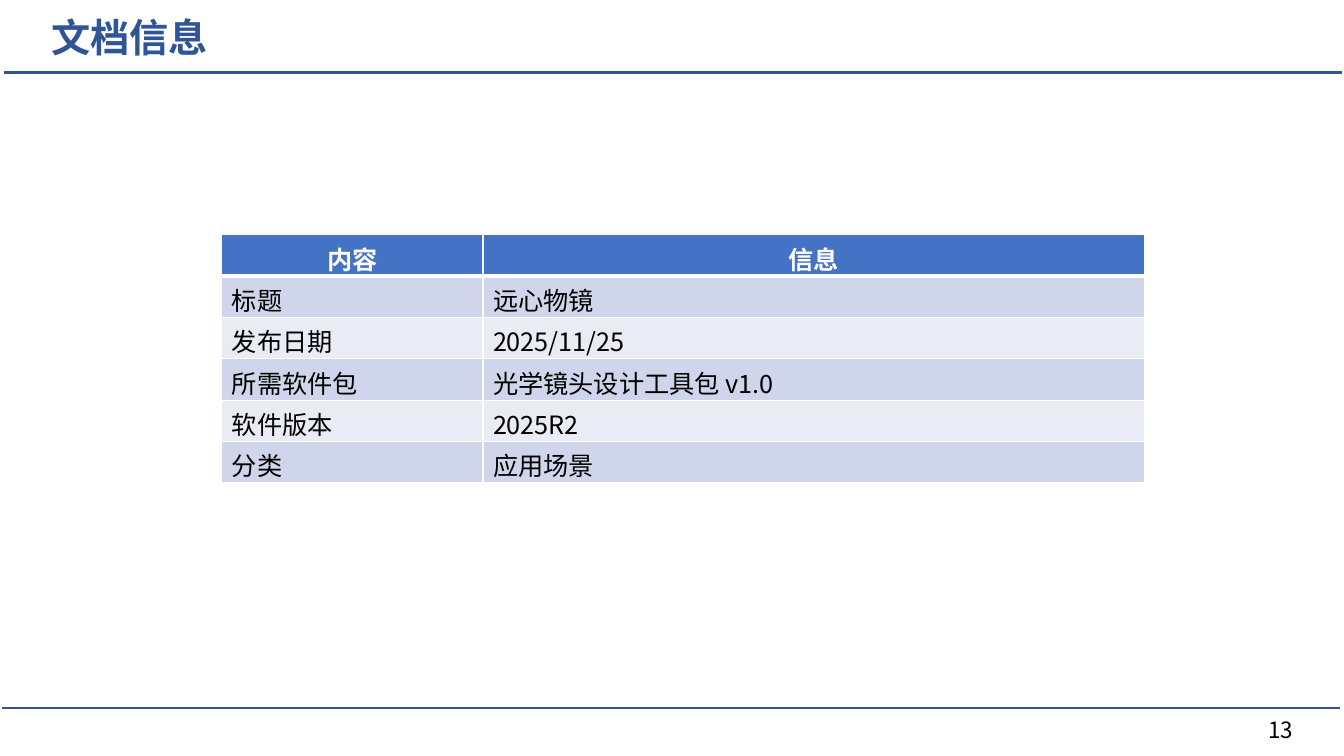
"""Build the document information slide."""
from lxml import etree
from pptx import Presentation, util as u
from pptx.dml.color import RGBColor
from pptx.enum import shapes, text
from pptx.oxml.ns import qn

COLORS = {
    "navy": "2F5597",
    "header": "4472C4",
    "band_dark": "CFD5EA",
    "band_light": "E9EBF5",
    "white": "FFFFFF",
    "black": "000000",
}
FONT = "Noto Sans CJK SC"
DOCUMENT_INFO = [
    ("内容", "信息"),
    ("标题", "远心物镜"),
    ("发布日期", "2025/11/25"),
    ("所需软件包", "光学镜头设计工具包 v1.0"),
    ("软件版本", "2025R2"),
    ("分类", "应用场景"),
]


def rgb(name):
    return RGBColor.from_string(COLORS[name])


def write(frame, words, size=18, color="black", bold=False,
          align=text.PP_ALIGN.LEFT, spacing=None):
    paragraph = frame.paragraphs[0]
    paragraph.alignment = align
    paragraph.line_spacing = spacing
    run = paragraph.add_run()
    run.text = words
    run.font.size = u.Pt(size)
    run.font.bold = bold
    run.font.color.rgb = rgb(color)
    run.font.name = FONT
    east_asian = etree.SubElement(run.font._element, qn("a:ea"))
    east_asian.set("typeface", FONT)


class SlideBuilder:
    def __init__(self, slide):
        self.slide = slide

    def label(self, words, left, top, width, height, **style):
        box = self.slide.shapes.add_textbox(*map(u.Inches, (left, top, width, height)))
        box.text_frame.word_wrap = True
        box.text_frame.vertical_anchor = text.MSO_ANCHOR.MIDDLE
        write(box.text_frame, words, **style)

    def rule(self, left, right, y, weight):
        line = self.slide.shapes.add_connector(
            shapes.MSO_CONNECTOR.STRAIGHT, *map(u.Inches, (left, y, right, y)))
        line.line.color.rgb = rgb("navy")
        line.line.width = u.Pt(weight)
        etree.SubElement(line._element.spPr, qn("a:effectLst"))

    def borders(self, cell, **weights):
        properties = cell._tc.get_or_add_tcPr()
        for side in "LRTB":
            edge = etree.SubElement(properties, qn(f"a:ln{side}"))
            edge.set("w", str(u.Pt(weights.get(side, 1))))
            fill = etree.SubElement(edge, qn("a:solidFill"))
            etree.SubElement(fill, qn("a:srgbClr")).set("val", COLORS["white"])

    def table(self, rows, left, top, widths, row_height):
        grid = self.slide.shapes.add_table(
            len(rows), len(widths), u.Inches(left), u.Inches(top),
            u.Inches(sum(widths)), u.Inches(row_height * len(rows))).table
        for column, width in zip(grid.columns, widths):
            column.width = u.Inches(width)
        for r, entries in enumerate(rows):
            grid.rows[r].height = u.Inches(row_height)
            if r == 0:
                band = "header"
                style = dict(color="white", bold=True, align=text.PP_ALIGN.CENTER)
            else:
                band = "band_dark" if r % 2 else "band_light"
                style = {}
            for c, words in enumerate(entries):
                cell = grid.cell(r, c)
                self.borders(cell, T=3 if r == 1 else 1, B=3 if r == 0 else 1)
                cell.fill.solid()
                cell.fill.fore_color.rgb = rgb(band)
                write(cell.text_frame, words, **style)


def main():
    deck = Presentation()
    deck.slide_width, deck.slide_height = u.Inches(13.33), u.Inches(7.5)
    page = SlideBuilder(deck.slides.add_slide(deck.slide_layouts[6]))
    page.label("13", 12.48, 7.04, 0.55, 0.4, size=16)
    page.rule(0.04, 13.31, 0.72, 2.25)
    page.rule(0.02, 13.29, 7.02, 1.5)
    page.table(DOCUMENT_INFO, 2.2, 2.33, (2.59, 6.56), 0.41)
    page.label("文档信息", 0.41, 0.17, 5.18, 0.45,
               size=28, color="navy", bold=True, spacing=0.9)
    deck.save("out.pptx")


if __name__ == "__main__":
    main()
